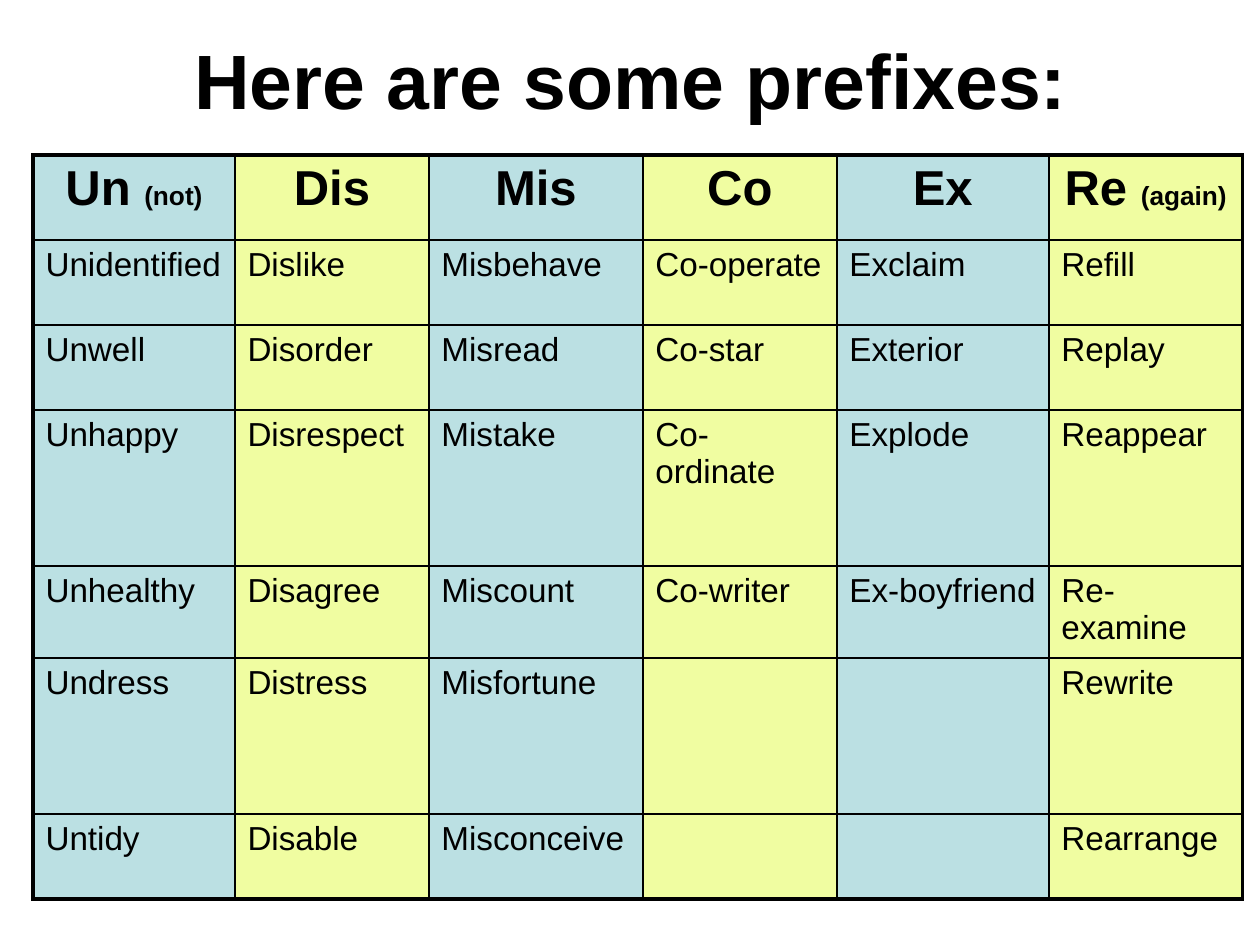
"""Build a slide with a table of English prefixes and example words."""
import lxml.etree
import pptx
import pptx.dml.color
import pptx.enum.text
import pptx.oxml.ns
import pptx.util

SCALE = 914400 // 126
COLORS = {"ink": "000000", "blue": "BBE0E3", "yellow": "F0FDA1"}
ALIGN = pptx.enum.text.PP_ALIGN
ANCHOR = pptx.enum.text.MSO_ANCHOR
FORMATS = {
    "title": {"size": 44, "bold": True},
    "head": {"size": 28, "bold": True},
    "gloss": {"size": 15, "bold": True},
    "word": {"size": 19, "bold": False},
}
COLUMNS = [
    (202, "Un", "(not)", "Unidentified Unwell Unhappy Unhealthy Undress Untidy"),
    (194, "Dis", "", "Dislike Disorder Disrespect Disagree Distress Disable"),
    (214, "Mis", "", "Misbehave Misread Mistake Miscount Misfortune Misconceive"),
    (194, "Co", "", "Co-operate Co-star Co-ordinate Co-writer"),
    (212, "Ex", "", "Exclaim Exterior Explode Ex-boyfriend"),
    (194, "Re", "(again)", "Refill Replay Reappear Re-examine Rewrite Rearrange"),
]
ROW_HEIGHTS = [85, 85, 85, 156, 92, 156, 85]


def px(n):
    return pptx.util.Emu(n * SCALE)


def rgb(name):
    return pptx.dml.color.RGBColor.from_string(COLORS[name])


class Deck:
    def __init__(self, width, height):
        self.prs = pptx.Presentation()
        self.prs.slide_width, self.prs.slide_height = px(width), px(height)
        self.s = self.prs.slides.add_slide(self.prs.slide_layouts[5])
        self.font = "Arial"

    def run(self, p, text, style):
        r = p.add_run()
        r.text = text
        r.font.name = self.font
        r.font.color.rgb = rgb("ink")
        for name, value in FORMATS[style].items():
            setattr(r.font, name, pptx.util.Pt(value) if name == "size" else value)

    def title(self, text, x, y, w, h):
        sp = self.s.shapes.title
        box = {"left": x, "top": y, "width": w, "height": h}
        for name, value in box.items():
            setattr(sp, name, px(value))
        tf = sp.text_frame
        tf.auto_size = pptx.enum.text.MSO_AUTO_SIZE.NONE
        tf.vertical_anchor = ANCHOR.MIDDLE
        tf.paragraphs[0].alignment = ALIGN.CENTER
        self.run(tf.paragraphs[0], text, "title")

    def borders(self, cell, widths):
        tc_pr = cell._tc.get_or_add_tcPr()
        qn = pptx.oxml.ns.qn
        for i, (side, width) in enumerate(widths.items()):
            ln = lxml.etree.Element(qn(f"a:ln{side}"), w=str(pptx.util.Pt(width)))
            fill = lxml.etree.SubElement(ln, qn("a:solidFill"))
            lxml.etree.SubElement(fill, qn("a:srgbClr"), val=COLORS["ink"])
            tc_pr.insert(i, ln)

    def table(self, x, y, columns, heights, thin=1, thick=2.25):
        rows, cols = len(heights), len(columns)
        width = sum(column[0] for column in columns)
        frame = self.s.shapes.add_table(
            rows, cols, px(x), px(y), px(width), px(sum(heights)))
        tbl = frame.table
        tbl.first_row = tbl.horz_banding = False
        for row, height in zip(tbl.rows, heights):
            row.height = px(height)
        for c, (col_width, prefix, gloss, words) in enumerate(columns):
            tbl.columns[c].width = px(col_width)
            for r in range(rows):
                cell = tbl.cell(r, c)
                cell.fill.solid()
                cell.fill.fore_color.rgb = rgb("yellow" if c % 2 else "blue")
                edges = {"L": c == 0, "R": c == cols - 1, "T": r == 0, "B": r == rows - 1}
                self.borders(cell, {k: thick if v else thin for k, v in edges.items()})
            p = tbl.cell(0, c).text_frame.paragraphs[0]
            p.alignment = ALIGN.CENTER
            self.run(p, f"{prefix} " if gloss else prefix, "head")
            if gloss:
                self.run(p, gloss, "gloss")
            for r, word in enumerate(words.split(), 1):
                self.run(tbl.cell(r, c).text_frame.paragraphs[0], word, "word")


def main():
    deck = Deck(1260, 945)
    deck.title("Here are some prefixes:", 64, 0, 1134, 158)
    deck.table(33, 155, COLUMNS, ROW_HEIGHTS)
    deck.prs.save("out.pptx")


if __name__ == "__main__":
    main()
